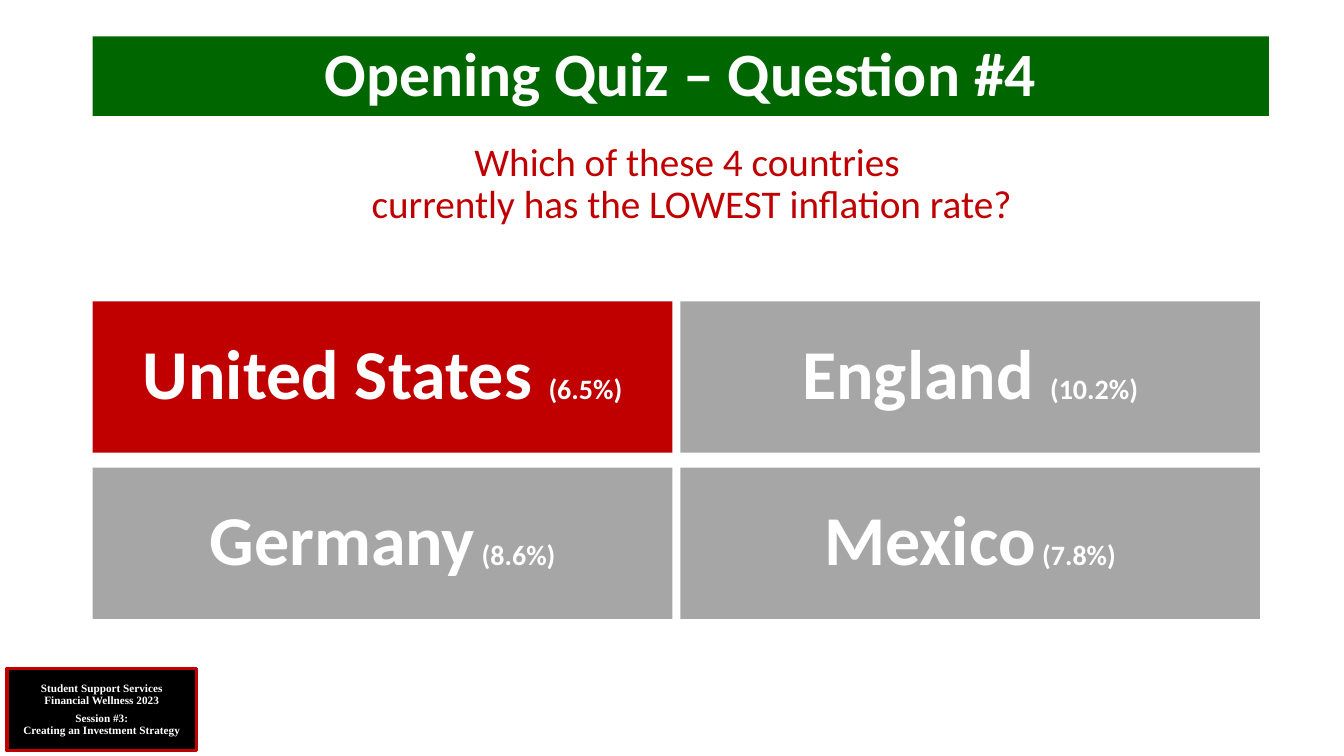
"""Build the quiz slide on inflation rates in four countries."""
from lxml import etree
from pptx import Presentation
from pptx.dml.color import RGBColor
from pptx.enum.shapes import MSO_SHAPE
from pptx.enum.text import MSO_ANCHOR, MSO_AUTO_SIZE, PP_ALIGN
from pptx.oxml.ns import qn
from pptx.util import Pt

RECTANGLE = MSO_SHAPE.RECTANGLE
MIDDLE, TOP = MSO_ANCHOR.MIDDLE, MSO_ANCHOR.TOP
CENTER = PP_ALIGN.CENTER
NO_AUTOFIT = MSO_AUTO_SIZE.NONE

WHITE = RGBColor(0xFF, 0xFF, 0xFF)
BLACK = RGBColor(0x00, 0x00, 0x00)
GREEN = RGBColor(0x00, 0x66, 0x00)
RED = RGBColor(0xC0, 0x00, 0x00)
GRAY = RGBColor(0xA6, 0xA6, 0xA6)

LEFT = 66.24
ANSWER_TOP, ANSWER_WIDTH, ANSWER_HEIGHT = 215.3, 414, 108
COLUMN_STEP, ROW_STEP = 419.8, 118.8
ANSWERS = [
    [("United States ", "(6.5%)", RED), ("England ", "(10.2%)", GRAY)],
    [("Germany", " (8.6%)", GRAY), ("Mexico", " (7.8%)", GRAY)],
]


def write(paragraph, text, size=20, color=WHITE, font="Calibri", bold=True):
    """Append formatted text to a centred paragraph, breaking at newlines."""
    paragraph.alignment = CENTER
    paragraph.line_spacing = 0.9
    for number, line in enumerate(text.split("\n")):
        if number:
            paragraph.add_line_break()
        run = paragraph.add_run()
        run.text = line
        run.font.size = Pt(size)
        run.font.name = font
        run.font.bold = bold
        run.font.color.rgb = color


class QuizSlide:
    """Hold the current slide and the style of its elements."""

    def __init__(self, deck):
        self.slide = deck.slides.add_slide(deck.slide_layouts[1])

    def place(self, shape, left, top, width, height, anchor):
        """Move a placeholder and return its text frame."""
        shape.left, shape.top = Pt(left), Pt(top)
        shape.width, shape.height = Pt(width), Pt(height)
        return self.frame(shape, anchor)

    def frame(self, shape, anchor=MIDDLE):
        """Prepare the text frame of a shape."""
        frame = shape.text_frame
        frame.word_wrap = True
        frame.auto_size = NO_AUTOFIT
        frame.vertical_anchor = anchor
        return frame

    def title(self, text, *box):
        """Fill the title banner."""
        banner = self.slide.shapes.title
        banner.fill.solid()
        banner.fill.fore_color.rgb = GREEN
        frame = self.place(banner, *box, MIDDLE)
        write(frame.paragraphs[0], text, size=44)

    def question(self, text, *box):
        """Fill the body placeholder with an unbulleted question."""
        frame = self.place(self.slide.placeholders[1], *box, TOP)
        paragraph = frame.paragraphs[0]
        properties = paragraph._p.get_or_add_pPr()
        properties.set("marL", "0")
        properties.set("indent", "0")
        etree.SubElement(properties, qn("a:buNone"))
        paragraph.space_before = Pt(0)
        write(paragraph, text, size=28, color=RED, bold=False)

    def panel(self, fill, left, top, width, height, border=None):
        """Draw a filled rectangle and return its text frame."""
        panel = self.slide.shapes.add_shape(
            RECTANGLE, Pt(left), Pt(top), Pt(width), Pt(height))
        panel.shadow.inherit = False
        panel.fill.solid()
        panel.fill.fore_color.rgb = fill
        if border is None:
            panel.line.fill.background()
        else:
            panel.line.color.rgb = border
            panel.line.width = Pt(2.25)
        return self.frame(panel)

    def answer(self, country, rate, fill, left, top):
        """Draw one answer with its inflation rate."""
        frame = self.panel(fill, left, top, ANSWER_WIDTH, ANSWER_HEIGHT)
        write(frame.paragraphs[0], country, size=50)
        write(frame.paragraphs[0], rate)

    def session_label(self, blocks, *box):
        """Draw the session label with a small gap between blocks."""
        frame = self.panel(BLACK, *box, border=RED)
        for number, block in enumerate(blocks):
            paragraph = frame.add_paragraph() if number else frame.paragraphs[0]
            paragraph.space_before = Pt(4 if number else 0)
            write(paragraph, block, size=8, font="Times New Roman")


def main():
    """Build and save the slide."""
    deck = Presentation()
    deck.slide_width, deck.slide_height = Pt(960), Pt(540)
    quiz = QuizSlide(deck)
    quiz.title("Opening Quiz – Question #4", LEFT, 25.9, 840.2, 56.9)
    quiz.question("Which of these 4 countries \n"
                  "currently has the LOWEST inflation rate?",
                  LEFT, 97.9, 855.4, 388.8)
    for row, answers in enumerate(ANSWERS):
        for column, (country, rate, fill) in enumerate(answers):
            quiz.answer(country, rate, fill, LEFT + column * COLUMN_STEP,
                        ANSWER_TOP + row * ROW_STEP)
    quiz.session_label(["Student Support Services\nFinancial Wellness 2023",
                        "Session #3:\nCreating an Investment Strategy"],
                       5, 477.4, 135.4, 59)
    deck.save("out.pptx")


if __name__ == "__main__":
    main()
